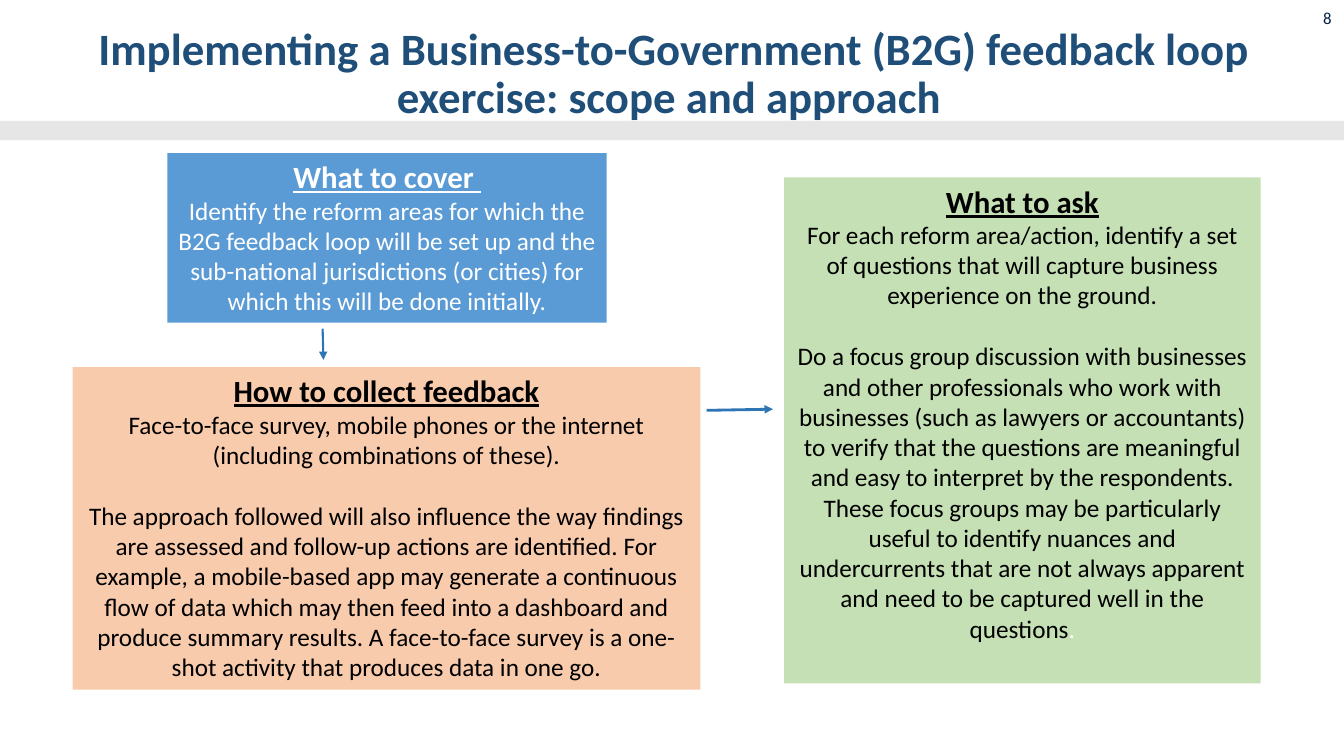
from lxml import etree
from pptx import Presentation
from pptx.dml.color import RGBColor
from pptx.enum.shapes import MSO_CONNECTOR as Connector, MSO_SHAPE as Shape
from pptx.enum.text import MSO_ANCHOR as Anchor, MSO_AUTO_SIZE as AutoSize, PP_ALIGN as Align
from pptx.oxml.ns import qn
from pptx.util import Cm, Pt

FONT = "Calibri"
COLOURS = {
    "title": "1F4E79", "number": "021F43", "band": "E7E6E6",
    "cover": "5B9BD5", "collect": "F8CBAD", "ask": "C5E0B4",
    "arrow": "2E75B6", "light": "FFFFFF", "dark": "000000",
}
TITLE = ("Implementing a Business-to-Government (B2G) feedback loop "
         "exercise: scope and approach ")

# Each step: fill, text colour, position and size in cm, heading, paragraphs of (text, colour) runs
STEPS = [
    ("cover", "light", (4.22, 3.86, 11.07, 4.27), "What to cover ", [
        [("Identify the reform areas for which the B2G feedback loop will be set up "
          "and the sub-national jurisdictions (or cities) for which this will be "
          "done initially.", "light")],
    ]),
    ("collect", "dark", (1.83, 9.25, 15.82, 8.13), "How to collect feedback", [
        [("Face-to-face survey, mobile phones or the internet (including "
          "combinations of these).", "dark")],
        [("The approach followed will also influence the way findings are assessed "
          "and follow-up actions are identified. For example, a mobile-based app may "
          "generate a continuous flow of data which may then feed into a dashboard "
          "and produce summary results. A face-to-face survey is a one-shot activity "
          "that produces data in one go.", "dark")],
    ]),
    ("ask", "dark", (19.76, 4.47, 12.01, 12.75), "What to ask", [
        [("For each reform area/action, identify a set of questions that will "
          "capture business experience on the ground.", "dark")],
        [("Do a focus group discussion with businesses and other professionals who "
          "work with businesses (such as lawyers or accountants) to verify that the "
          "questions are meaningful and easy to interpret by the respondents. These "
          "focus groups may be particularly useful to identify nuances and "
          "undercurrents that are not always apparent and need to be captured well "
          "in the questions", "dark"), (".", "light")],
    ]),
]
# Each arrow: start and end in cm, width in points
ARROWS = [
    ((8.13, 8.28, 8.15, 9.07), 1.5),
    ((17.81, 10.34, 19.48, 10.31), 2),
]


def colour(name):
    return RGBColor.from_string(COLOURS[name])


def add_run(paragraph, text, size, colour_name, bold=False, underline=False):
    run = paragraph.add_run()
    run.text = text
    font = run.font
    font.name, font.size = FONT, Pt(size)
    font.bold, font.underline = bold, underline
    font.color.rgb = colour(colour_name)


def add_block(slide, place, fill):
    block = slide.shapes.add_shape(Shape.RECTANGLE, *map(Cm, place))
    block.shadow.inherit = False
    block.fill.solid()
    block.fill.fore_color.rgb = colour(fill)
    block.line.fill.background()
    return block


def add_title(slide):
    title = slide.shapes.title
    title.left, title.top, title.width, title.height = map(Cm, (1.32, 0.84, 31.34, 2.11))
    frame = title.text_frame
    frame.auto_size = AutoSize.NONE
    frame.vertical_anchor = Anchor.MIDDLE
    paragraph = frame.paragraphs[0]
    paragraph.alignment = Align.CENTER
    paragraph.line_spacing = 0.9
    add_run(paragraph, TITLE, 32, "title", bold=True)


def add_page_number(slide, number):
    frame = slide.shapes.add_textbox(*map(Cm, (32.64, -0.05, 1.17, 1.02))).text_frame
    frame.word_wrap = True
    frame.vertical_anchor = Anchor.MIDDLE
    paragraph = frame.paragraphs[0]
    paragraph.alignment = Align.RIGHT
    add_run(paragraph, number, 12, "number")


def add_step(slide, fill, text_colour, place, heading, paragraphs):
    frame = add_block(slide, place, fill).text_frame
    frame.word_wrap = True
    frame.vertical_anchor = Anchor.TOP
    head = frame.paragraphs[0]
    head.alignment = Align.CENTER
    add_run(head, heading, 22, text_colour, bold=True, underline=True)
    for index, runs in enumerate(paragraphs):
        paragraph = frame.add_paragraph()
        paragraph.alignment = Align.CENTER
        paragraph.space_before = Pt(22 if index else 0)
        for text, run_colour in runs:
            add_run(paragraph, text, 18, run_colour)


def add_arrow(slide, ends, width):
    arrow = slide.shapes.add_connector(Connector.STRAIGHT, *map(Cm, ends))
    arrow.line.color.rgb = colour("arrow")
    arrow.line.width = Pt(width)
    properties = arrow.element.spPr
    etree.SubElement(properties.find(qn("a:ln")), qn("a:tailEnd"), type="triangle")
    etree.SubElement(properties, qn("a:effectLst"))


def main():
    deck = Presentation()
    deck.slide_width, deck.slide_height = Cm(33.87), Cm(19.05)
    slide = deck.slides.add_slide(deck.slide_layouts[5])

    # Header
    add_block(slide, (0, 3.05, 33.87, 0.48), "band")
    add_page_number(slide, "8")
    add_title(slide)

    # Steps of the feedback loop
    for step in STEPS:
        add_step(slide, *step)
    for ends, width in ARROWS:
        add_arrow(slide, ends, width)

    deck.save("out.pptx")


if __name__ == "__main__":
    main()
